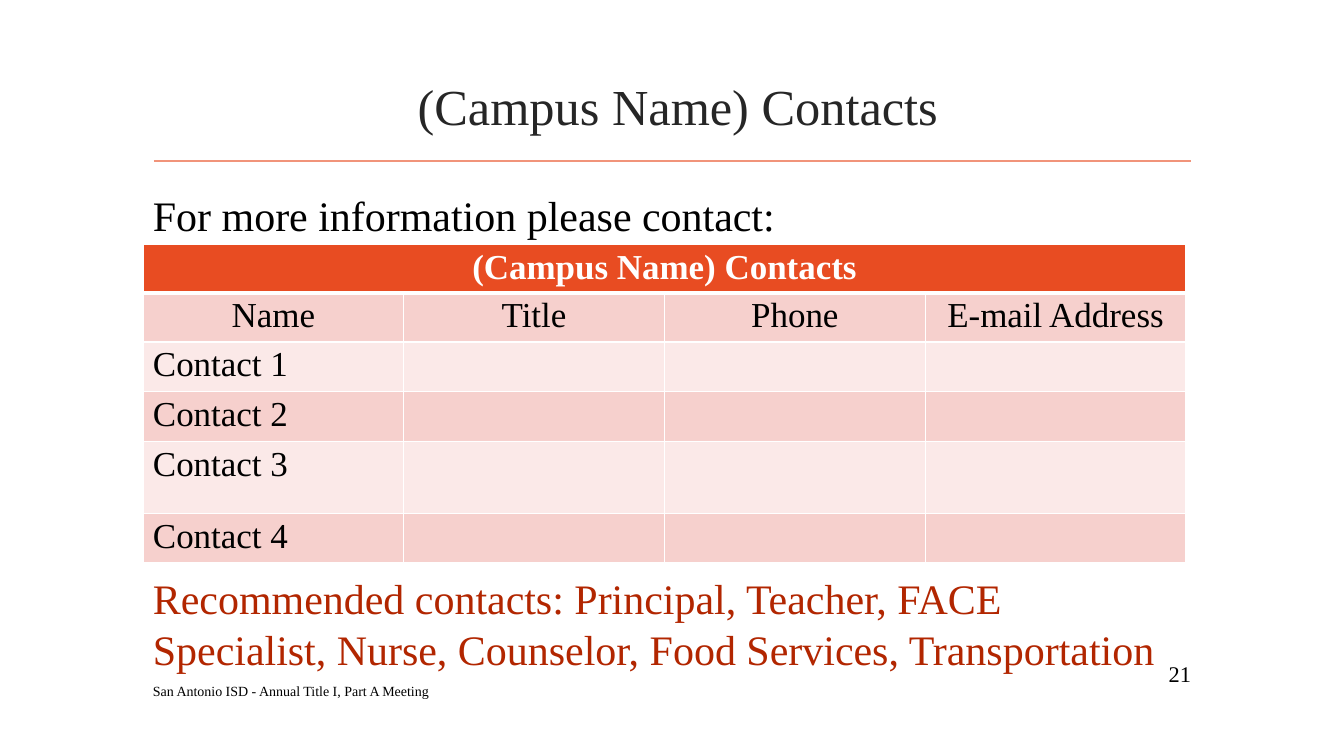
"""Build the campus contacts slide."""
import pptx
import pptx.dml.color
import pptx.enum.shapes
import pptx.enum.text
import pptx.oxml
import pptx.oxml.ns
import pptx.util

PX = 914400 / 100.8
FONT = "Times New Roman"
BLACK = pptx.dml.color.RGBColor(0x00, 0x00, 0x00)
WHITE = pptx.dml.color.RGBColor(0xFF, 0xFF, 0xFF)
CHARCOAL = pptx.dml.color.RGBColor(0x26, 0x26, 0x26)
RUST = pptx.dml.color.RGBColor(0xB2, 0x26, 0x00)
ORANGE = pptx.dml.color.RGBColor(0xE8, 0x4C, 0x22)
SALMON = pptx.dml.color.RGBColor(0xF1, 0x94, 0x7A)
PINK = pptx.dml.color.RGBColor(0xF6, 0xD0, 0xCD)
PALE_PINK = pptx.dml.color.RGBColor(0xFB, 0xE9, 0xE8)
LEFT = pptx.enum.text.PP_ALIGN.LEFT
CENTER = pptx.enum.text.PP_ALIGN.CENTER
RIGHT = pptx.enum.text.PP_ALIGN.RIGHT
TOP = pptx.enum.text.MSO_ANCHOR.TOP
MIDDLE = pptx.enum.text.MSO_ANCHOR.MIDDLE


def px(*lengths):
    return [pptx.util.Emu(round(length * PX)) for length in lengths]


def write(frame, text, size, color=BLACK, align=LEFT, bold=False, anchor=TOP):
    frame.word_wrap = True
    frame.vertical_anchor = anchor
    paragraph = frame.paragraphs[0]
    paragraph.alignment = align
    paragraph.font.size = pptx.util.Pt(size)
    if text:
        run = paragraph.add_run()
        run.text = text
        run.font.name = FONT
        run.font.size = pptx.util.Pt(size)
        run.font.bold = bold
        run.font.color.rgb = color


presentation = pptx.Presentation()
presentation.slide_width, presentation.slide_height = px(1344, 756)
slide = presentation.slides.add_slide(presentation.slide_layouts[6])

rule = slide.shapes.add_connector(
    pptx.enum.shapes.MSO_CONNECTOR.STRAIGHT, *px(154, 161, 1191, 161))
rule.line.color.rgb = SALMON
rule.line.width = pptx.util.Pt(1.25)
rule._element.spPr.append(pptx.oxml.parse_xml(
    f'<a:effectLst {pptx.oxml.ns.nsdecls("a")}/>'))

ROWS = [
    ["(Campus Name) Contacts", "", "", ""],
    ["Name", "Title", "Phone", "E-mail Address"],
    *[[f"Contact {number}", "", "", ""] for number in range(1, 5)],
]
ROW_HEIGHTS = [49, 49, 48, 49, 72, 48]
table = slide.shapes.add_table(
    len(ROWS), 4, *px(143, 244, 1043, sum(ROW_HEIGHTS))).table
for row, height in zip(table.rows, ROW_HEIGHTS):
    row.height = px(height)[0]
for row_index, texts in enumerate(ROWS):
    header = row_index == 0
    fill = ORANGE if header else (PALE_PINK, PINK)[row_index % 2]
    for column_index, text in enumerate(texts):
        cell = table.cell(row_index, column_index)
        cell.margin_left, cell.margin_right, cell.margin_top, cell.margin_bottom = px(10, 10, 4, 3)
        write(cell.text_frame, text, 25, WHITE if header else BLACK,
              CENTER if row_index < 2 else LEFT, header)
        properties = cell._tc.get_or_add_tcPr()
        for side in ("lnL", "lnR", "lnT", "lnB"):
            thick = (row_index, side) in ((0, "lnB"), (1, "lnT"))
            properties.append(pptx.oxml.parse_xml(
                f'<a:{side} {pptx.oxml.ns.nsdecls("a")} w="{pptx.util.Pt(3 if thick else 1)}">'
                f'<a:solidFill><a:srgbClr val="{WHITE}"/></a:solidFill></a:{side}>'))
        cell.fill.solid()
        cell.fill.fore_color.rgb = fill
table.cell(0, 0).merge(table.cell(0, 3))

TEXT_BOXES = [
    ((73, 49, 1210, 113), "(Campus Name) Contacts",
     dict(size=36, color=CHARCOAL, align=CENTER, anchor=MIDDLE)),
    ((143, 675, 805, 31), "San Antonio ISD - Annual Title I, Part A Meeting",
     dict(size=10, anchor=MIDDLE)),
    ((1141, 658, 60, 31), "21", dict(size=16, align=RIGHT, anchor=MIDDLE)),
    ((143, 185, 901, 61), "For more information please contact:", dict(size=30)),
    ((143, 568, 1043, 112),
     "Recommended contacts: Principal, Teacher, FACE Specialist, Nurse, "
     "Counselor, Food Services, Transportation", dict(size=30, color=RUST)),
]
for box, text, text_format in TEXT_BOXES:
    write(slide.shapes.add_textbox(*px(*box)).text_frame, text, **text_format)

presentation.save("out.pptx")
